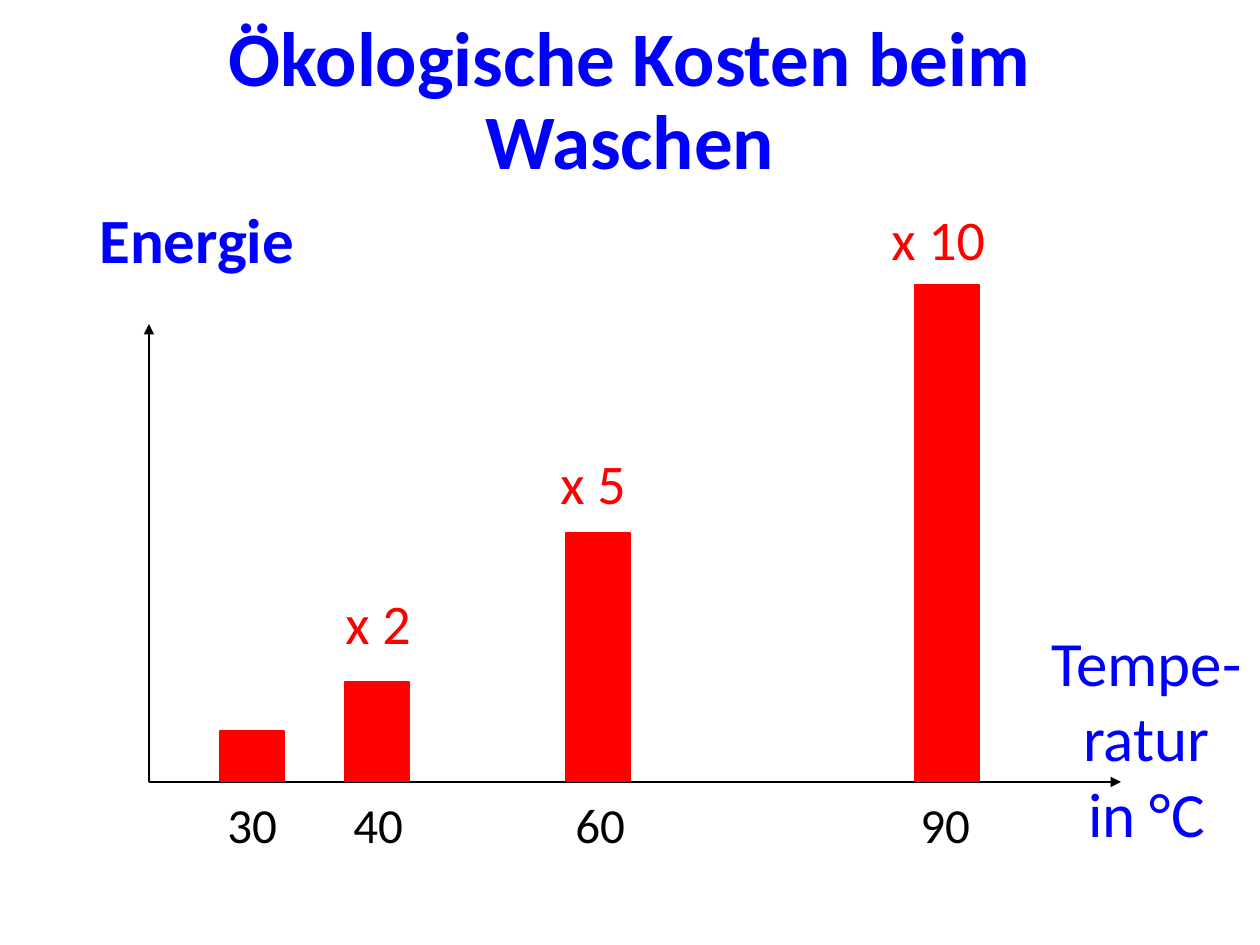
from lxml.etree import SubElement
from pptx import Presentation
from pptx.dml.color import RGBColor
from pptx.enum.shapes import MSO_CONNECTOR, MSO_SHAPE
from pptx.enum.text import MSO_ANCHOR, PP_ALIGN
from pptx.oxml.ns import qn
from pptx.util import Pt

PX = 914400 // 126
COLORS = {"blue": "0000FF", "red": "FF0000", "black": "000000"}

# Content: temperature, bar left edge, energy factor, label left and top
BARS = [
    ("30", 220, 1, None),
    ("40", 345, 2, (333, 582)),
    ("60", 566, 5, (548, 442)),
    ("90", 915, 10, (879, 198)),
]
# Text, box in px, format
TEXTS = [
    (["Ökologische Kosten beim Waschen"], (87, 50, 1086, 106),
     {"size": 44, "bold": True, "align": PP_ALIGN.CENTER,
      "anchor": MSO_ANCHOR.MIDDLE, "spacing": 0.9}),
    (["Energie"], (87, 194, 1086, 89), {"size": 36, "bold": True}),
    (["Tempe-ratur", "in °C"], (1036, 617, 221, 242),
     {"size": 36, "align": PP_ALIGN.CENTER}),
]
ORIGIN = (149, 782)
AXIS_ENDS = [(1121, 782), (149, 324)]
BAR_WIDTH, TALLEST = 64, 496
TICK_BOX = (215, 788, 958, 72)
TICK_STOPS = [126, 348, 693]


def px(*values):
    return [value * PX for value in values]


def rgb(name):
    return RGBColor.from_string(COLORS[name])


def add_text(page, lines, place, size, color="blue", bold=False,
             align=PP_ALIGN.LEFT, anchor=MSO_ANCHOR.TOP, spacing=None):
    box = page.shapes.add_textbox(*px(*place))
    frame = box.text_frame
    frame.word_wrap = True
    frame.vertical_anchor = anchor
    for index, line in enumerate(lines):
        para = frame.paragraphs[0] if index == 0 else frame.add_paragraph()
        para.alignment = align
        para.line_spacing = spacing
        span = para.add_run()
        span.text = line
        for key, value in {"name": "Calibri", "size": Pt(size), "bold": bold}.items():
            setattr(span.font, key, value)
        span.font.color.rgb = rgb(color)
    return frame


def add_axis(page, start, end):
    axis = page.shapes.add_connector(MSO_CONNECTOR.STRAIGHT, *px(*start, *end))
    axis.line.color.rgb = rgb("black")
    axis.line.width = Pt(1.5)
    SubElement(axis.line._get_or_add_ln(), qn("a:tailEnd"), type="triangle")
    SubElement(axis._element.spPr, qn("a:effectLst"))


def add_bar(page, left, factor):
    height = round(TALLEST * factor / 10)
    bar = page.shapes.add_shape(
        MSO_SHAPE.RECTANGLE, *px(left, ORIGIN[1] - 1 - height, BAR_WIDTH, height))
    bar.shadow.inherit = False
    bar.fill.solid()
    bar.fill.fore_color.rgb = rgb("red")
    bar.line.color.rgb = rgb("red")
    bar.line.width = Pt(1)


deck = Presentation()
deck.slide_width, deck.slide_height = px(1260, 945)
page = deck.slides.add_slide(deck.slide_layouts[6])

# Title and axis names
for lines, place, style in TEXTS:
    add_text(page, lines, place, **style)

# Axes
for end in AXIS_ENDS:
    add_axis(page, ORIGIN, end)

# Temperatures on one line, placed by tab stops
ticks = add_text(page, ["\t".join(bar[0] for bar in BARS)], TICK_BOX, 28, "black")
stops = SubElement(ticks.paragraphs[0]._p.get_or_add_pPr(), qn("a:tabLst"))
for stop in TICK_STOPS:
    SubElement(stops, qn("a:tab"), pos=str(stop * PX), algn="l")

# Bars and their factors
for _, left, factor, label in BARS:
    add_bar(page, left, factor)
    if label:
        add_text(page, [f"x {factor}"], (*label, 135, 81), 32, "red")

deck.save("out.pptx")
